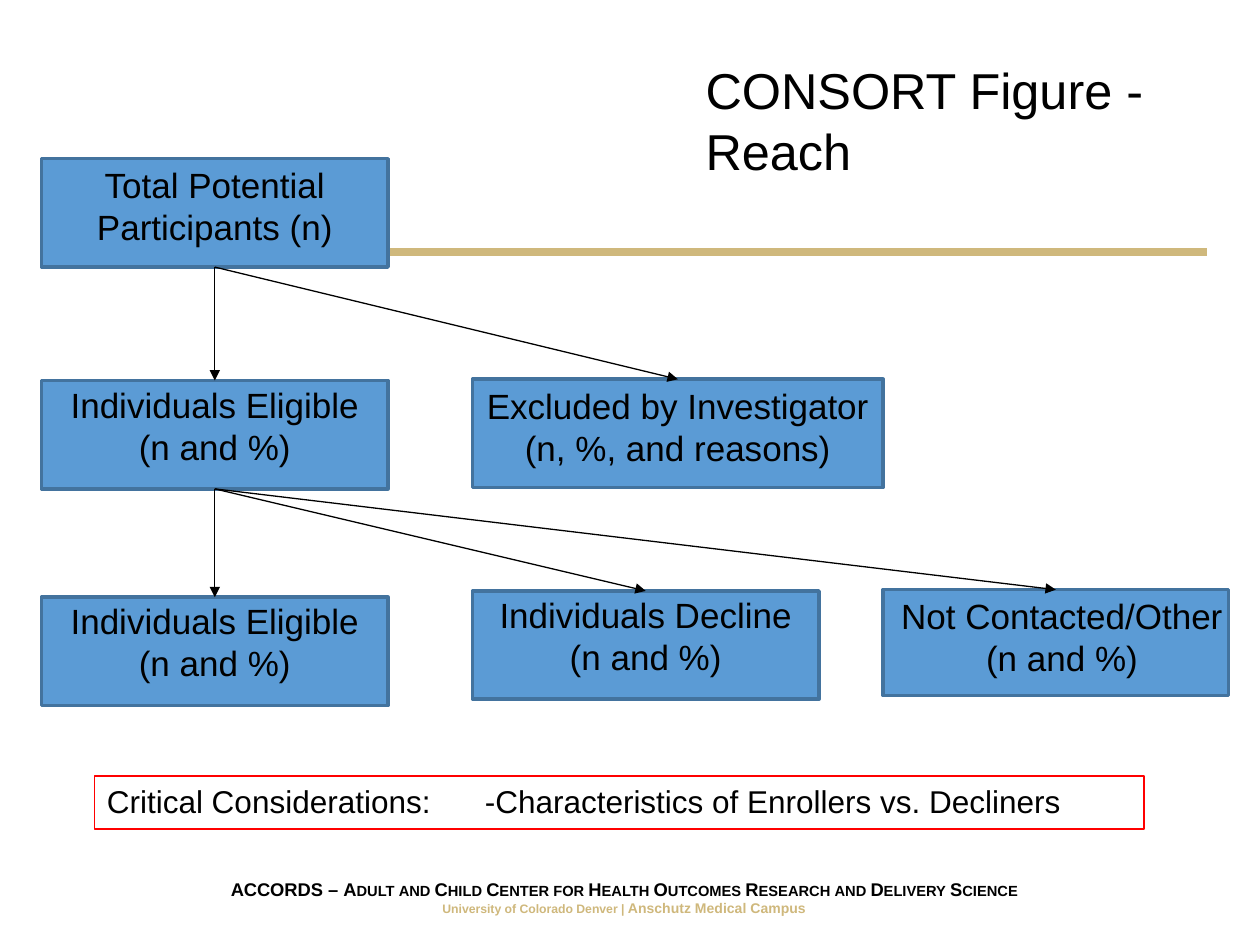
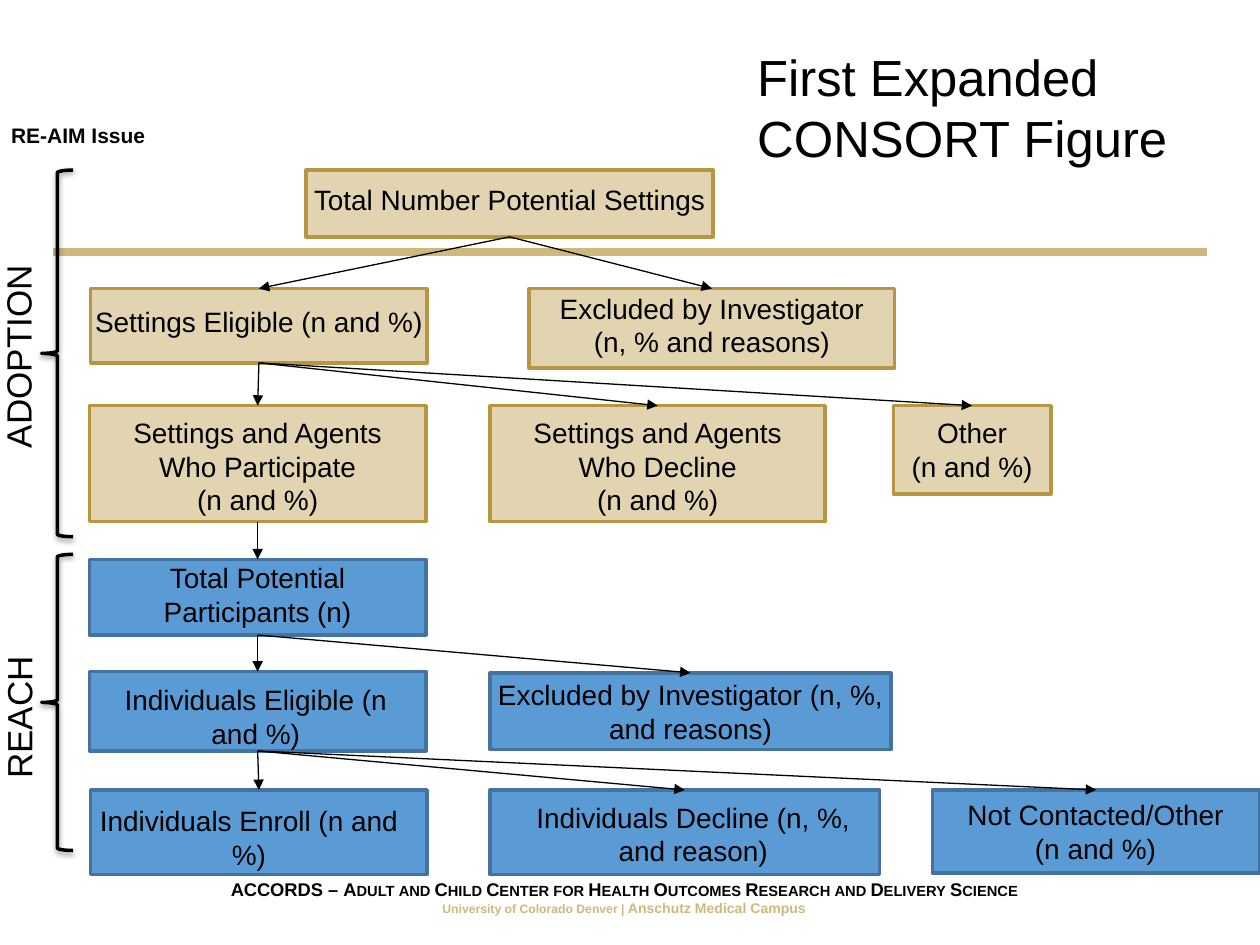
import pptx
import pptx.util
import pptx.dml.color
import pptx.enum.shapes
import pptx.enum.text
import pptx.oxml
import pptx.oxml.ns
from pptx.util import Inches

ANCHOR = pptx.enum.text.MSO_ANCHOR
ALIGN = pptx.enum.text.PP_ALIGN
SHAPE = pptx.enum.shapes.MSO_SHAPE
STRAIGHT = pptx.enum.shapes.MSO_CONNECTOR.STRAIGHT
QN = pptx.oxml.ns.qn
NAMESPACE = pptx.oxml.ns.nsdecls("a")

FONT = "Arial"
BLACK, WHITE, RED, GOLD = "000000", "FFFFFF", "FF0000", "CFB87C"
REACH_COLOURS = ("5B9BD5", "43739E")  # fill, outline
ADOPTION_COLOURS = ("E2D4B0", "B69643")


def colour(hex_code):
    return pptx.dml.color.RGBColor.from_string(hex_code)


def write(shape, lines, size, alignment=ALIGN.LEFT, anchor=ANCHOR.TOP,
          left=0.1, top=0.05, right=0.1, bold=False):
    """Fill a shape with paragraphs in one style."""
    frame = shape.text_frame
    frame.word_wrap = True
    frame.auto_size = pptx.enum.text.MSO_AUTO_SIZE.NONE
    frame.vertical_anchor = anchor
    frame.margin_left, frame.margin_right = Inches(left), Inches(right)
    frame.margin_top, frame.margin_bottom = Inches(top), Inches(0)
    frame.text = "\n".join(lines)
    for paragraph in frame.paragraphs:
        paragraph.alignment = alignment
        paragraph.font.name = FONT
        paragraph.font.size = pptx.util.Pt(size)
        paragraph.font.bold = bold
        paragraph.font.color.rgb = colour(BLACK)


presentation = pptx.Presentation()
presentation.slide_width, presentation.slide_height = Inches(10), Inches(7.5)

# Boxes: name, left, top, width, height, lines, then insets (top, left, right)
reach_boxes = [
    ("total", 0.33, 1.26, 2.75, 0.86,
     ["Total Potential", "Participants (n)"], (0.04, 0.04, 0.04)),
    ("eligible", 0.33, 3.02, 2.75, 0.86,
     ["Individuals Eligible", "(n and %)"], (0.02, 0.04, 0.04)),
    ("excluded", 3.75, 3.01, 3.26, 0.86,
     ["Excluded by Investigator", "(n, %, and reasons)"], (0.04, 0.04, 0.04)),
    ("enrolled", 0.33, 4.74, 2.75, 0.86,
     ["Individuals Eligible", "(n and %)"], (0.02, 0.04, 0.04)),
    ("decline", 3.75, 4.69, 2.75, 0.86,
     ["Individuals Decline", "(n and %)"], (0.02, 0.04, 0.04)),
    ("other", 7.01, 4.68, 2.74, 0.84,
     ["Not Contacted/Other", "(n and %)"], (0.04, 0.1, 0)),
]
reach_arrows = [("total", "eligible"), ("total", "excluded"),
                ("eligible", "enrolled"), ("eligible", "decline"),
                ("eligible", "other")]

setting_boxes = [
    ("settings", 2.43, 1.35, 3.23, 0.53,
     ["Total Number Potential Settings"], (0.1, 0.01, 0.01)),
    ("settings eligible", 0.72, 2.29, 2.67, 0.59,
     ["Settings Eligible (n and %)"], (0.13, 0.01, 0.01)),
    ("settings excluded", 4.2, 2.29, 2.9, 0.63,
     ["Excluded by Investigator", "(n, % and reasons)"], (0.02, 0.04, 0.04)),
    ("settings participate", 0.71, 3.22, 2.67, 0.92,
     ["Settings and Agents Who Participate", "(n and %)"], (0.08, 0.18, 0.18)),
    ("settings decline", 3.89, 3.22, 2.66, 0.92,
     ["Settings and Agents Who Decline", "(n and %)"], (0.08, 0.18, 0.18)),
    ("settings other", 7.09, 3.22, 1.25, 0.7,
     ["Other", "(n and %)"], (0.08, 0.04, 0.04)),
]
person_boxes = [
    ("total", 0.71, 4.44, 2.67, 0.6,
     ["Total Potential Participants (n)"], (0.01, 0.2, 0.2)),
    ("eligible", 0.71, 5.33, 2.67, 0.63,
     ["Individuals Eligible (n and %)"], (0.09, 0.17, 0.2)),
    ("excluded", 3.89, 5.34, 3.18, 0.61,
     ["Excluded by Investigator (n, %, and reasons)"], (0.04, 0.04, 0.04)),
    ("enrolled", 0.72, 6.27, 2.67, 0.67,
     ["Individuals Enroll (n and %)"], (0.11, 0.04, 0.2)),
    ("decline", 3.89, 6.27, 3.09, 0.67,
     ["Individuals Decline (n, %, and reason)"], (0.08, 0.23, 0.1)),
    ("other", 7.4, 6.27, 2.6, 0.66,
     ["Not Contacted/Other (n and %)"], (0.06, 0.17, 0.18)),
]
setting_arrows = [("settings", "settings eligible"),
                  ("settings", "settings excluded"),
                  ("settings eligible", "settings participate"),
                  ("settings eligible", "settings decline"),
                  ("settings eligible", "settings other"),
                  ("settings participate", "total")]

# Slides: title, place, size, anchor, box text size, box groups, arrows
figures = [
    ("CONSORT Figure - Reach", (5.5, 0.55, 4, 0.75), 28.8, ANCHOR.MIDDLE, 20,
     [(REACH_COLOURS, reach_boxes)], reach_arrows),
    ("First Expanded CONSORT Figure", (5.91, 0.31, 3.84, 1.08), 29, ANCHOR.TOP,
     16, [(ADOPTION_COLOURS, setting_boxes), (REACH_COLOURS, person_boxes)],
     setting_arrows + reach_arrows),
]
slides = []
for title, place, title_size, anchor, box_size, groups, arrows in figures:
    slide = presentation.slides.add_slide(presentation.slide_layouts[5])
    slides.append(slide)
    slide.background.fill.solid()
    slide.background.fill.fore_color.rgb = colour(WHITE)

    # Gold rule
    rule = slide.shapes.add_connector(
        STRAIGHT, Inches(0.42), Inches(2), Inches(9.58), Inches(2))
    rule.line.color.rgb = colour(GOLD)
    rule.line.width = pptx.util.Pt(4.5)
    rule._element.spPr.append(pptx.oxml.parse_xml(f"<a:effectLst {NAMESPACE}/>"))

    # Footer
    footer = slide.shapes.add_textbox(
        Inches(0.79), Inches(6.92), Inches(8.33), Inches(0.4))
    write(footer, ["ACCORDS – ", "University of Colorado Denver | "], 10.5,
          ALIGN.CENTER, ANCHOR.MIDDLE, top=0, bold=True)
    center_line, campus_line = footer.text_frame.paragraphs
    center_name = center_line.add_run()
    center_name.text = ("Adult and Child Center for Health Outcomes Research "
                        "and Delivery Science")
    center_name.font._element.set("cap", "small")
    campus_line.font.color.rgb = colour(GOLD)
    campus_line.add_run().text = "Anschutz Medical Campus"
    for run, size in zip(campus_line.runs, (7, 8)):
        run.font.size = pptx.util.Pt(size)

    # Title
    heading = slide.shapes.title
    heading.left, heading.top, heading.width, heading.height = map(Inches, place)
    write(heading, [title], title_size, anchor=anchor)

    # Flow boxes
    boxes = {}
    for (fill, outline), group in groups:
        for name, left, top, width, height, lines, insets in group:
            box = slide.shapes.add_shape(
                SHAPE.RECTANGLE, *map(Inches, (left, top, width, height)))
            box.shadow.inherit = False
            box.fill.solid()
            box.fill.fore_color.rgb = colour(fill)
            box.line.color.rgb = colour(outline)
            box.line.width = pptx.util.Pt(2)
            write(box, lines, box_size, ALIGN.CENTER, top=insets[0],
                  left=insets[1], right=insets[2])
            boxes[name] = box

    # Arrows from the bottom of one box to the top of the next
    for start, end in arrows:
        arrow = slide.shapes.add_connector(STRAIGHT, 0, 0, 0, 0)
        arrow.begin_connect(boxes[start], 2)
        arrow.end_connect(boxes[end], 0)
        arrow.line.color.rgb = colour(BLACK)
        arrow.line.width = pptx.util.Pt(0.75)
        arrow.line._get_or_add_ln().append(
            pptx.oxml.parse_xml(f'<a:tailEnd {NAMESPACE} type="triangle"/>'))
        arrow._element.spPr.append(
            pptx.oxml.parse_xml(f"<a:effectLst {NAMESPACE}/>"))

reach_slide, expanded_slide = slides

# Slide 1: critical considerations
note = reach_slide.shapes.add_shape(
    SHAPE.RECTANGLE, Inches(0.75), Inches(6.16), Inches(8.33), Inches(0.42))
note.shadow.inherit = False
note.fill.background()
note.line.color.rgb = colour(RED)
note.line.width = pptx.util.Pt(0.75)
write(note, ["Critical Considerations: \t-Characteristics of Enrollers vs. Decliners"],
      18)

# Slide 2: braces with their RE-AIM labels
issue = expanded_slide.shapes.add_textbox(
    Inches(-0.01), Inches(0.92), Inches(1.67), Inches(0.3))
write(issue, ["RE-AIM Issue"], 12, bold=True)
for label, brace_top, brace_height, label_left, label_top, label_width in [
        ("ADOPTION", 1.35, 2.91, -0.79, 2.5, 1.87),
        ("REACH", 4.4, 2.35, -0.54, 5.37, 1.38)]:
    brace = expanded_slide.shapes.add_shape(
        SHAPE.LEFT_BRACE, Inches(0.33), Inches(brace_top),
        Inches(0.25), Inches(brace_height))
    brace.fill.background()
    brace.line.color.rgb = colour(BLACK)
    brace.line.width = pptx.util.Pt(2)
    brace.shadow.inherit = False
    brace._element.spPr.find(QN("a:effectLst")).append(pptx.oxml.parse_xml(
        f'<a:outerShdw {NAMESPACE} blurRad="40000" dist="20000" dir="5400000" '
        'rotWithShape="0"><a:srgbClr val="000000"><a:alpha val="38000"/>'
        '</a:srgbClr></a:outerShdw>'))
    issue_label = expanded_slide.shapes.add_textbox(
        Inches(label_left), Inches(label_top), Inches(label_width), Inches(0.44))
    issue_label.rotation = 270
    write(issue_label, [label], 20)

presentation.save("out.pptx")
